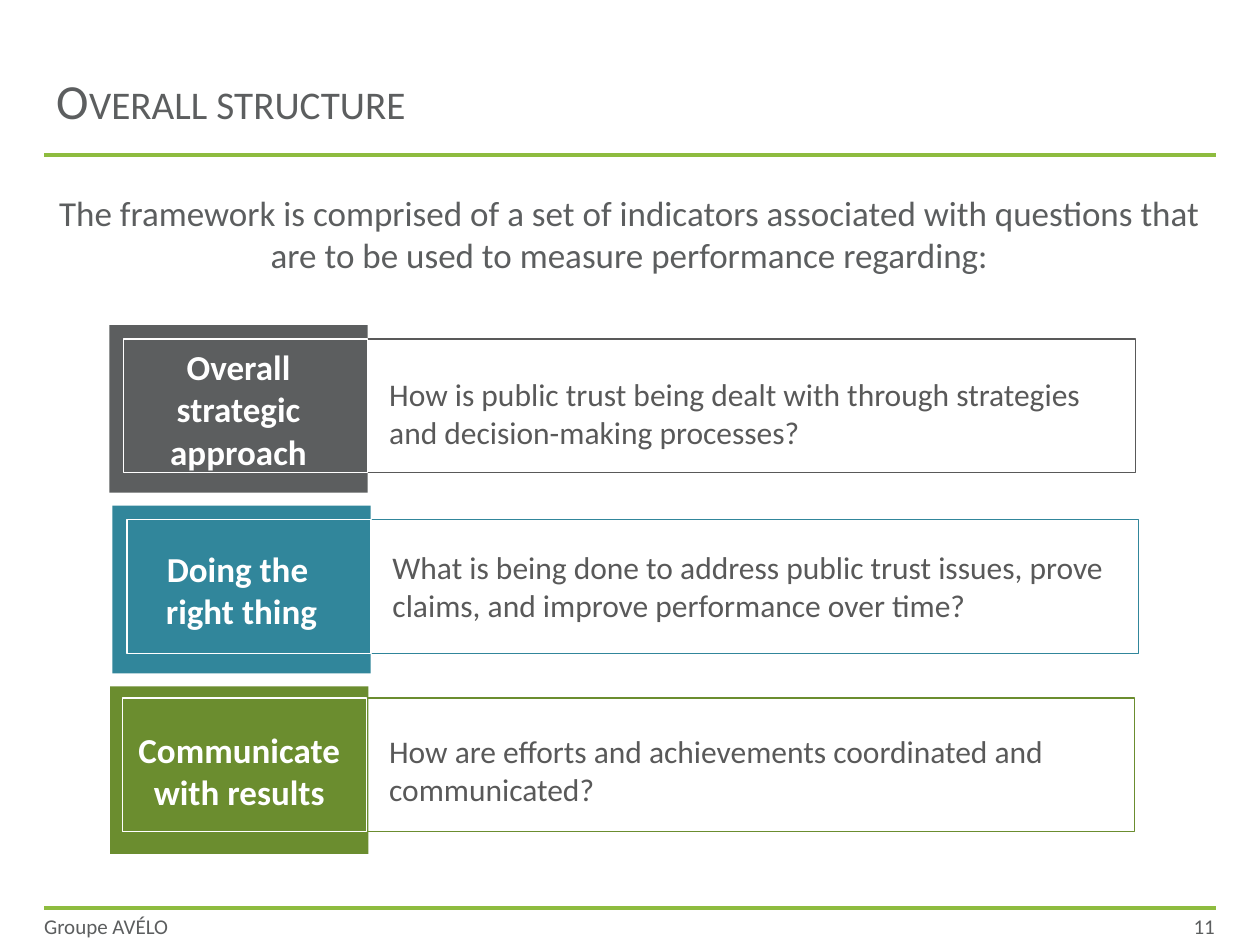
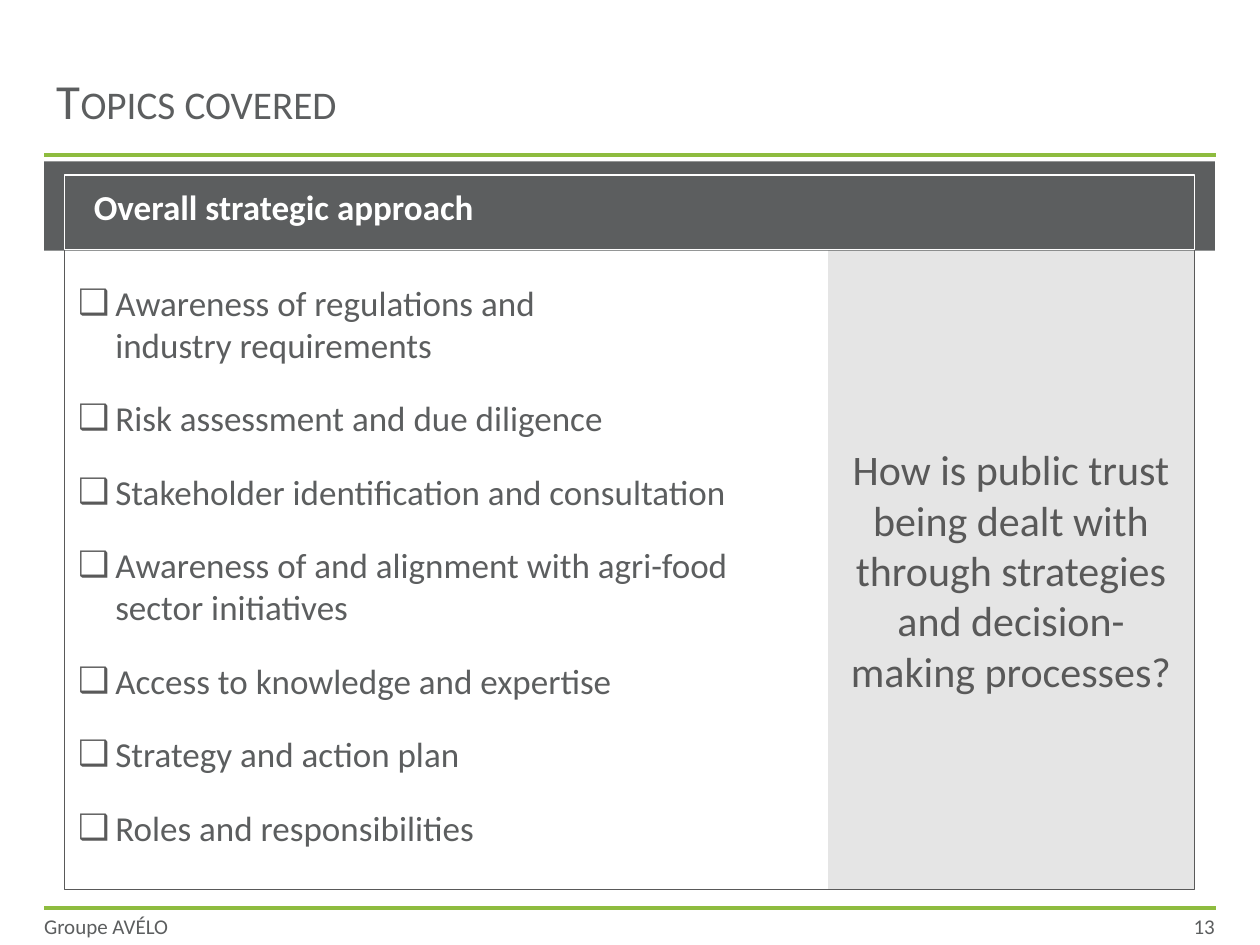
import pptx
import pptx.dml.color
import pptx.enum.shapes
import pptx.enum.text
import pptx.oxml.ns
import pptx.util
from lxml import etree

Pt = pptx.util.Pt
ALIGN = pptx.enum.text.PP_ALIGN
ANCHOR = pptx.enum.text.MSO_ANCHOR
RECTANGLE = pptx.enum.shapes.MSO_SHAPE.RECTANGLE

COLOURS = {
    "white": "FFFFFF",
    "rule": "8EBC3F",
    "slate": "5C5E5F",
    "grey": "595959",
    "teal": "31869B",
    "olive": "6B8D2F",
    "pale": "D9D9D9",
}
FONT = "Calibri"
LEFT, RIGHT, WIDTH = 25.2, 694.8, 669
TITLE_RULE, FOOTER_RULE = 88.5, 519
STRATEGY_QUESTION = ("How is public trust being dealt with through strategies "
                     "and decision-making processes?")

# Theme blocks: label, colour, question, block left, frame left, frame top,
# question left, question top, question width
THEMES = [
    ("Overall strategic approach", "slate", "grey", STRATEGY_QUESTION,
     62.5, 70.6, 193.7, 215.3, 211, 411),
    ("Doing the \vright thing", "teal", "teal",
     "What is being done to address public trust issues, prove claims, "
     "and improve performance over time?",
     64.2, 72.6, 297, 217.2, 309.6, 433.5),
    ("Communicate with results", "olive", "olive",
     "How are efforts and achievements coordinated and communicated?",
     62.9, 70, 398.9, 215.3, 414.6, 410),
]
BLOCK_TOP, BLOCK_STEP = 185.8, 103.2

TOPICS = [
    "Awareness of regulations and \vindustry requirements",
    "Risk assessment and due diligence",
    "Stakeholder identification and consultation",
    "Awareness of and alignment with agri-food \vsector initiatives",
    "Access to knowledge and expertise",
    "Strategy and action plan",
    "Roles and responsibilities",
]


def rgb(name):
    return pptx.dml.color.RGBColor.from_string(COLOURS[name])


def apply(target, formats):
    for name, value in formats.items():
        setattr(target, name, value)


def add_xml(parent, tag, **attributes):
    return etree.SubElement(parent, pptx.oxml.ns.qn(tag), attributes)


def place(shape, left, top, width, height):
    apply(shape, {"left": Pt(left), "top": Pt(top),
                  "width": Pt(width), "height": Pt(height)})


def write(shape, lines, size, colour, align=ALIGN.LEFT, anchor=ANCHOR.MIDDLE,
          bold=False, margins=None, spacing=None):
    """Fill a shape with one formatted paragraph per line."""
    frame = shape.text_frame
    apply(frame, {"word_wrap": True, "vertical_anchor": anchor,
                  "auto_size": pptx.enum.text.MSO_AUTO_SIZE.NONE})
    apply(frame, margins or {})
    frame.text = "\n".join(lines)
    for para in frame.paragraphs:
        apply(para, {"alignment": align, **(spacing or {})})
        for span in para.runs:
            apply(span.font, {"name": FONT, "size": Pt(size), "bold": bold})
            span.font.color.rgb = rgb(colour)
    return frame


def set_indent(para, left, hanging=0, bullet=None):
    properties = para._p.get_or_add_pPr()
    properties.set("marL", str(Pt(left)))
    properties.set("indent", str(Pt(-hanging)))
    if bullet:
        colour = add_xml(properties, "a:buClr")
        add_xml(colour, "a:srgbClr", val=COLOURS["grey"])
        add_xml(properties, "a:buChar", char=bullet)
    else:
        add_xml(properties, "a:buNone")


def add_box(page, left, top, width, height, fill=None, line=None, opacity=100):
    box = page.shapes.add_shape(RECTANGLE, Pt(left), Pt(top), Pt(width), Pt(height))
    box.shadow.inherit = False
    if fill:
        box.fill.solid()
        box.fill.fore_color.rgb = rgb(fill)
        if opacity < 100:
            colour = box.fill._xPr.find(".//" + pptx.oxml.ns.qn("a:srgbClr"))
            add_xml(colour, "a:alpha", val=str(opacity * 1000))
    else:
        box.fill.background()
    if line:
        box.line.color.rgb = rgb(line)
        box.line.width = Pt(0.75)
    else:
        box.line.fill.background()
    return box


def add_text(page, left, top, width, height, text, size, colour, **formats):
    box = page.shapes.add_textbox(Pt(left), Pt(top), Pt(width), Pt(height))
    write(box, [text], size, colour, **formats)


def add_rule(page, top):
    rule = page.shapes.add_connector(pptx.enum.shapes.MSO_CONNECTOR.STRAIGHT,
                                     Pt(LEFT), Pt(top), Pt(RIGHT), Pt(top))
    rule.line.color.rgb = rgb("rule")
    rule.line.width = Pt(2.25)
    add_xml(rule._element.spPr, "a:effectLst")


def add_page(deck, title, number):
    """Add a page with title, two rules and footer."""
    page = deck.slides.add_slide(deck.slide_layouts[1])
    place(page.shapes.title, LEFT, 21.6, WIDTH, 70.6)
    frame = write(page.shapes.title, [title], 28, "slate")
    frame.paragraphs[0].runs[0].font._element.set("cap", "small")
    for top in (TITLE_RULE, FOOTER_RULE):
        add_rule(page, top)
    flush = dict.fromkeys(
        ("margin_left", "margin_top", "margin_right", "margin_bottom"), 0)
    add_text(page, LEFT, FOOTER_RULE, 130, 20.2, "Groupe AVÉLO", 12, "slate",
             margins=flush)
    add_text(page, 575.2, FOOTER_RULE, 119, 20.2, str(number), 12, "slate",
             align=ALIGN.RIGHT, margins=flush)
    return page


def add_theme(page, row, theme):
    (label, colour, outline, question, block_left, frame_left, frame_top,
     text_left, text_top, text_width) = theme
    block = add_box(page, block_left, BLOCK_TOP + row * BLOCK_STEP, 147.6, 95.8,
                    fill=colour)
    write(block, [label], 20, "white", align=ALIGN.CENTER, bold=True)
    add_text(page, text_left, text_top, text_width, 51, question, 18, "grey",
             anchor=ANCHOR.TOP)
    for width, line in ((578.2, outline), (139.4, "white")):
        add_box(page, frame_left, frame_top, width, 76.3, line=line)


def build_structure(deck):
    page = add_page(deck, "Overall structure", 11)
    intro = page.placeholders[1]
    place(intro, LEFT, 105.8, WIDTH, 402.5)
    frame = write(
        intro,
        ["The framework is comprised of a set of indicators associated with "
         "questions that are to be used to measure performance regarding:"],
        20, "slate", align=ALIGN.CENTER, anchor=ANCHOR.TOP,
        spacing={"space_before": Pt(5)})
    set_indent(frame.paragraphs[0], 0)
    for row, theme in enumerate(THEMES):
        add_theme(page, row, theme)


def build_topics(deck):
    page = add_page(deck, "Topics covered", 13)

    # Question panel and outline
    panel = add_box(page, 473, 142.6, 209.5, 365.8, fill="pale", line="white",
                    opacity=68)
    write(panel, [STRATEGY_QUESTION], 24, "grey", align=ALIGN.CENTER)
    add_box(page, 36.7, 100, 645.8, 408.2, line="grey")

    # Topic checklist
    checklist = page.placeholders[1]
    place(checklist, 37.4, 157, 391, 334)
    frame = write(checklist, TOPICS, 20, "slate", anchor=ANCHOR.TOP,
                  spacing={"space_before": Pt(12), "space_after": Pt(6)})
    for para in frame.paragraphs:
        set_indent(para, 21.3, hanging=21.3, bullet="❑")

    # Heading band
    band = add_box(page, LEFT, 92.2, WIDTH, 51, fill="slate")
    frame = write(band, ["Overall strategic approach"], 20, "white", bold=True)
    set_indent(frame.paragraphs[0], 21.3)
    add_box(page, 36.7, 100, 645.8, 42.5, line="white")


def main():
    deck = pptx.Presentation()
    apply(deck, {"slide_width": Pt(720), "slide_height": Pt(540)})
    build_structure(deck)
    build_topics(deck)
    deck.save("out.pptx")


if __name__ == "__main__":
    main()
